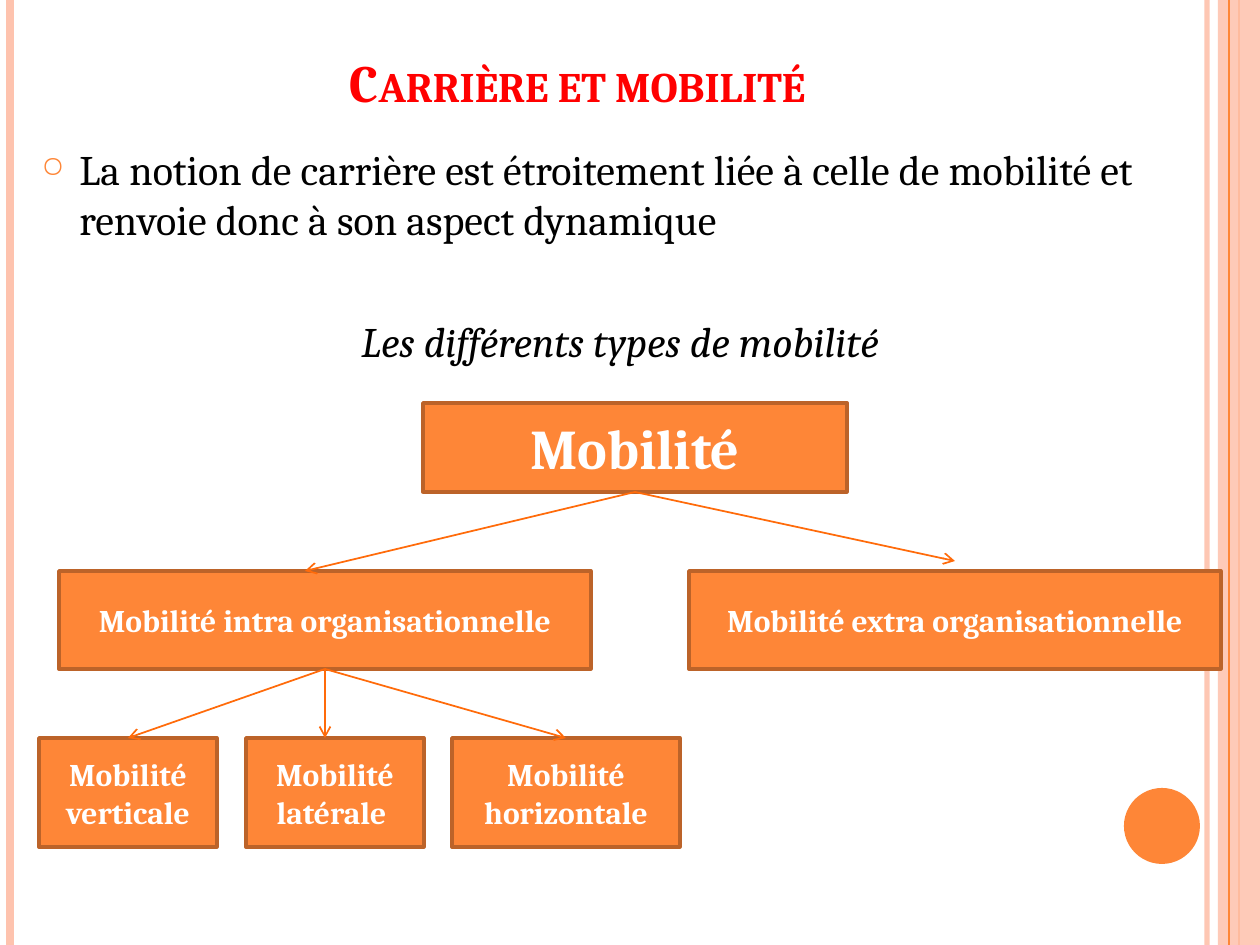
"""Builds the slide on careers and the types of mobility."""
from lxml import etree
from pptx import Presentation, util as u
from pptx.dml.color import RGBColor
from pptx.enum import shapes, text
from pptx.oxml.ns import qn

THEME = {
    "font": "Cambria",
    "title": {"size": 30, "color": "FF0000", "bold": True},
    "body": {"size": 24, "color": "000000"},
    "subtitle": {"size": 24, "color": "000000", "italic": True},
    "root": {"size": 32, "color": "FFFFFF", "bold": True},
    "branch": {"size": 18, "color": "FFFFFF", "bold": True},
    "accent": "FE8637", "border": "BC6329", "pale": "FEC3AE", "arrow": "FF6B0A",
}
PX = 914400 / 126
WIDTH, HEIGHT = 1260, 945

TITLE = "Carrière et mobilité"
NOTION = ("La notion de carrière est étroitement liée à celle de mobilité "
          "et renvoie donc à son aspect dynamique")
SUBTITLE = "Les différents types de mobilité"
TITLE_AREA = (63, 38, 1029, 81)
BODY_AREA = (29, 137, 1182, 777)
BOXES = {
    "root": ("Mobilité", "root", (423, 403, 424, 89)),
    "intra": ("Mobilité intra organisationnelle", "branch", (59, 571, 532, 98)),
    "extra": ("Mobilité extra organisationnelle", "branch", (689, 571, 532, 98)),
    "vertical": ("Mobilité verticale", "branch", (39, 738, 178, 109)),
    "lateral": ("Mobilité latérale ", "branch", (246, 738, 178, 109)),
    "horizontal": ("Mobilité horizontale", "branch", (452, 738, 228, 109)),
}
LINKS = [
    ("root", "intra", (-20, 0)), ("root", "extra", (0, -10)),
    ("intra", "lateral", (-10, 0)), ("intra", "vertical", (0, 0)),
    ("intra", "horizontal", (0, 0)),
]
RULES_BEHIND = [(1207, "pale", 3, 93), (10, "pale", 4.5, 100), (1239, "accent", 1.5, 100)]
BAND = (1218, 0, 42, HEIGHT)
RULE_ON_BAND = (1229, "accent", 0.75, 100)
DISC = (1124, 788, 76, 76)


def px(*lengths):
    return [u.Emu(round(length * PX)) for length in lengths]


def set_alpha(properties, percent):
    if percent < 100:
        color = properties.find(".//" + qn("a:srgbClr"))
        etree.SubElement(color, qn("a:alpha")).set("val", str(percent * 1000))


def add_line(slide, start, end, color, weight):
    line = slide.shapes.add_connector(shapes.MSO_CONNECTOR.STRAIGHT, *px(*start, *end))
    line.line.color.rgb = RGBColor.from_string(THEME[color])
    line.line.width = u.Pt(weight)
    etree.SubElement(line._element.spPr, qn("a:effectLst"))
    return line


def add_rule(slide, x, color, weight, alpha):
    rule = add_line(slide, (x, 0), (x, HEIGHT), color, weight)
    set_alpha(rule._element.spPr, alpha)


def add_solid(slide, preset, area, color):
    solid = slide.shapes.add_shape(preset, *px(*area))
    solid.shadow.inherit = False
    solid.fill.solid()
    solid.fill.fore_color.rgb = RGBColor.from_string(THEME[color])
    solid.line.fill.background()
    return solid


def write(paragraph, wording, style, **layout):
    run = paragraph.add_run()
    run.text = wording
    look = {"name": THEME["font"], **THEME[style]}
    run.font.color.rgb = RGBColor.from_string(look.pop("color"))
    look["size"] = u.Pt(look["size"])
    for target, values in ((run.font, look), (paragraph, layout)):
        for key, value in values.items():
            setattr(target, key, value)
    return run


def add_text_area(slide, area, anchor):
    frame = slide.shapes.add_textbox(*px(*area)).text_frame
    frame.word_wrap = True
    frame.vertical_anchor = anchor
    return frame


def add_bullet(paragraph):
    properties = paragraph._p.get_or_add_pPr()
    properties.set("marL", str(px(38)[0]))
    properties.set("indent", str(px(-38)[0]))
    color = etree.SubElement(properties, qn("a:buClr"))
    etree.SubElement(color, qn("a:srgbClr")).set("val", THEME["accent"])
    etree.SubElement(properties, qn("a:buSzPct")).set("val", "70000")
    etree.SubElement(properties, qn("a:buChar")).set("char", "○")


def add_box(slide, wording, style, area):
    box = add_solid(slide, shapes.MSO_SHAPE.RECTANGLE, area, "accent")
    box.line.color.rgb = RGBColor.from_string(THEME["border"])
    box.line.width = u.Pt(2)
    box.text_frame.word_wrap = True
    box.text_frame.vertical_anchor = text.MSO_ANCHOR.MIDDLE
    write(box.text_frame.paragraphs[0], wording, style, alignment=text.PP_ALIGN.CENTER)


def add_link(slide, parent, child, shift):
    x, y, width, height = BOXES[parent][2]
    left, top, child_width, _ = BOXES[child][2]
    end = (left + child_width / 2 + shift[0], top + shift[1])
    link = add_line(slide, (x + width / 2, y + height), end, "arrow", 1)
    outline = link._element.spPr.find(qn("a:ln"))
    etree.SubElement(outline, qn("a:tailEnd")).set("type", "arrow")


def main():
    deck = Presentation()
    deck.slide_width, deck.slide_height = px(WIDTH, HEIGHT)
    slide = deck.slides.add_slide(deck.slide_layouts[6])

    for rule in RULES_BEHIND:
        add_rule(slide, *rule)
    band = add_solid(slide, shapes.MSO_SHAPE.RECTANGLE, BAND, "pale")
    set_alpha(band._element.spPr, 87)
    add_rule(slide, *RULE_ON_BAND)
    add_solid(slide, shapes.MSO_SHAPE.OVAL, DISC, "accent")

    heading = add_text_area(slide, TITLE_AREA, text.MSO_ANCHOR.BOTTOM)
    title = write(heading.paragraphs[0], TITLE, "title", alignment=text.PP_ALIGN.CENTER)
    title.font._element.set("cap", "small")

    body = add_text_area(slide, BODY_AREA, text.MSO_ANCHOR.TOP)
    write(body.paragraphs[0], NOTION, "body", space_before=u.Pt(6))
    add_bullet(body.paragraphs[0])
    write(body.add_paragraph(), SUBTITLE, "subtitle",
          alignment=text.PP_ALIGN.CENTER, space_before=u.Pt(41))

    for box in BOXES.values():
        add_box(slide, *box)
    for link in LINKS:
        add_link(slide, *link)
    deck.save("out.pptx")


if __name__ == "__main__":
    main()
